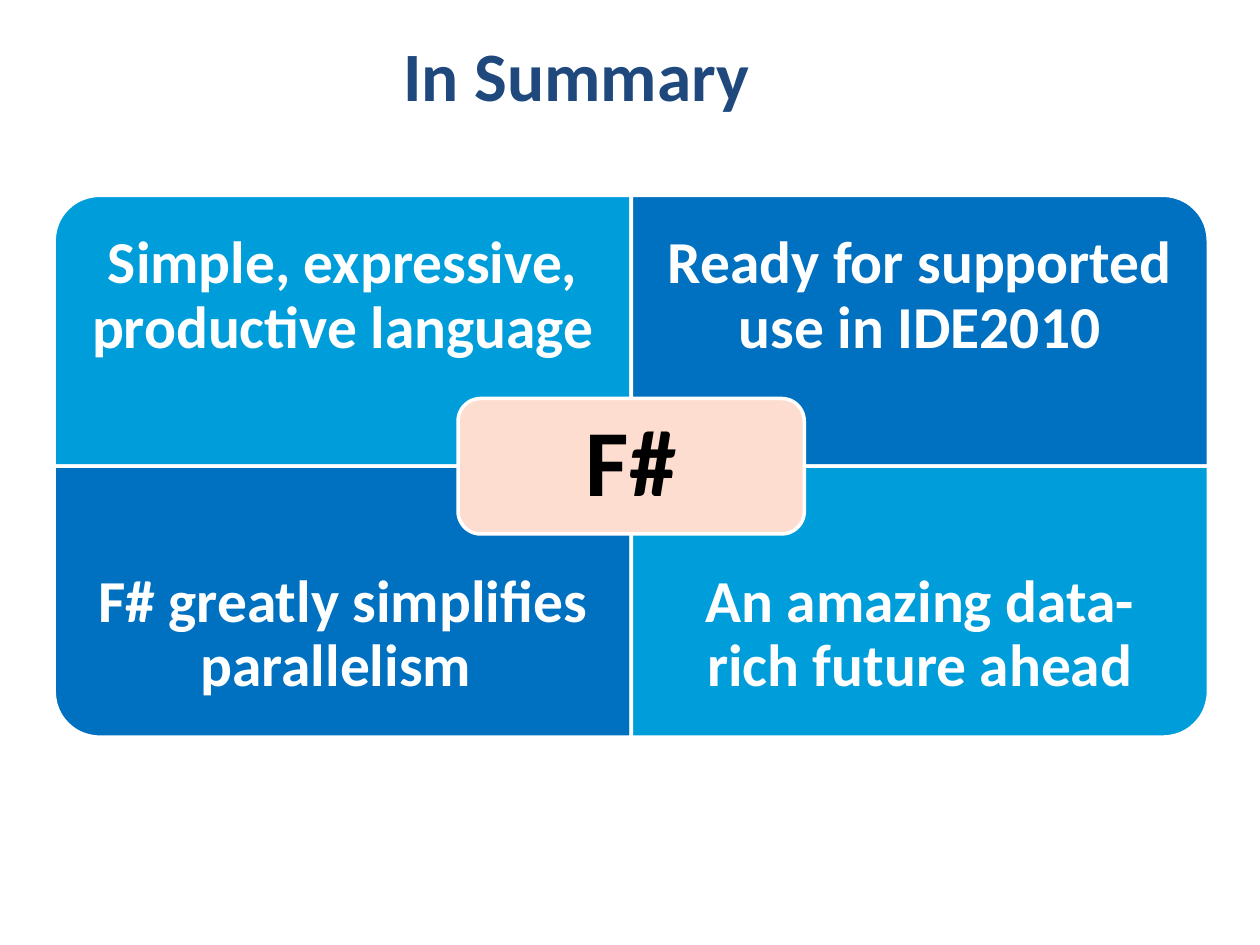
"""Build the summary slide: four rounded quarters around a central label."""
from pptx import Presentation
from pptx.dml.color import RGBColor
from pptx.enum.shapes import MSO_SHAPE as Shape
from pptx.enum.text import MSO_ANCHOR as Anchor, PP_ALIGN as Align
from pptx.util import Inches, Pt

NAVY = RGBColor(0x1F, 0x49, 0x7D)
SKY = RGBColor(0x00, 0x9D, 0xDB)
BLUE = RGBColor(0x00, 0x70, 0xC0)
PEACH = RGBColor(0xFC, 0xDD, 0xCF)
WHITE = RGBColor(0xFF, 0xFF, 0xFF)
BLACK = RGBColor(0x00, 0x00, 0x00)

LEFT, TOP = 0.43, 1.55
COL, ROW = 4.58, 2.15

deck = Presentation()
deck.slide_width, deck.slide_height = Inches(10), Inches(7.5)
slide = deck.slides.add_slide(deck.slide_layouts[6])


def add_text(words, box, size, color, inset, space):
    frame = slide.shapes.add_textbox(*map(Inches, box)).text_frame
    frame.word_wrap = True
    frame.vertical_anchor = Anchor.MIDDLE
    frame.margin_left = frame.margin_right = Inches(inset)
    frame.margin_top = frame.margin_bottom = Inches(min(inset, 0.26))
    para = frame.paragraphs[0]
    para.text = words
    para.alignment = Align.CENTER
    para.line_spacing = space
    font = para.font
    font.name, font.size, font.bold = "Calibri", Pt(size), True
    font.color.rgb = color


def add_tile(kind, mid_x, mid_y, wide, high, fill, turn=0):
    box = mid_x - wide / 2, mid_y - high / 2, wide, high
    tile = slide.shapes.add_shape(kind, *map(Inches, box))
    tile.rotation = turn
    tile.shadow.inherit = False
    tile.fill.solid()
    tile.fill.fore_color.rgb = fill
    tile.line.color.rgb = WHITE
    tile.line.width = Pt(2)


add_text("In Summary", (0, 0.25, 9.15, 0.67), 39.6, NAVY, 0.05, 1.0)

quarters = [
    (0, 0, 270, SKY, "Simple, expressive, productive language"),
    (1, 0, 0, BLUE, "Ready for supported use in IDE2010"),
    (0, 1, 180, BLUE, "F# greatly simplifies parallelism "),
    (1, 1, 90, SKY, "An amazing data-rich future ahead"),
]
for col, row, turn, fill, words in quarters:
    x, y = LEFT + col * COL, TOP + row * ROW
    wide, high = (ROW, COL) if turn % 180 else (COL, ROW)
    add_tile(Shape.ROUND_1_RECTANGLE, x + COL / 2, y + ROW / 2, wide, high, fill, turn)
    add_text(words, (x, y + row * ROW / 4, COL, ROW * 0.75), 34, WHITE, 0.26, 0.9)

wide, high = COL * 0.6, ROW / 2
add_tile(Shape.ROUNDED_RECTANGLE, LEFT + COL, TOP + ROW, wide, high, PEACH)
label = LEFT + COL - wide / 2, TOP + ROW - high / 2, wide, high
add_text("F#", label, 54, BLACK, 0.23, 0.9)

deck.save("out.pptx")
